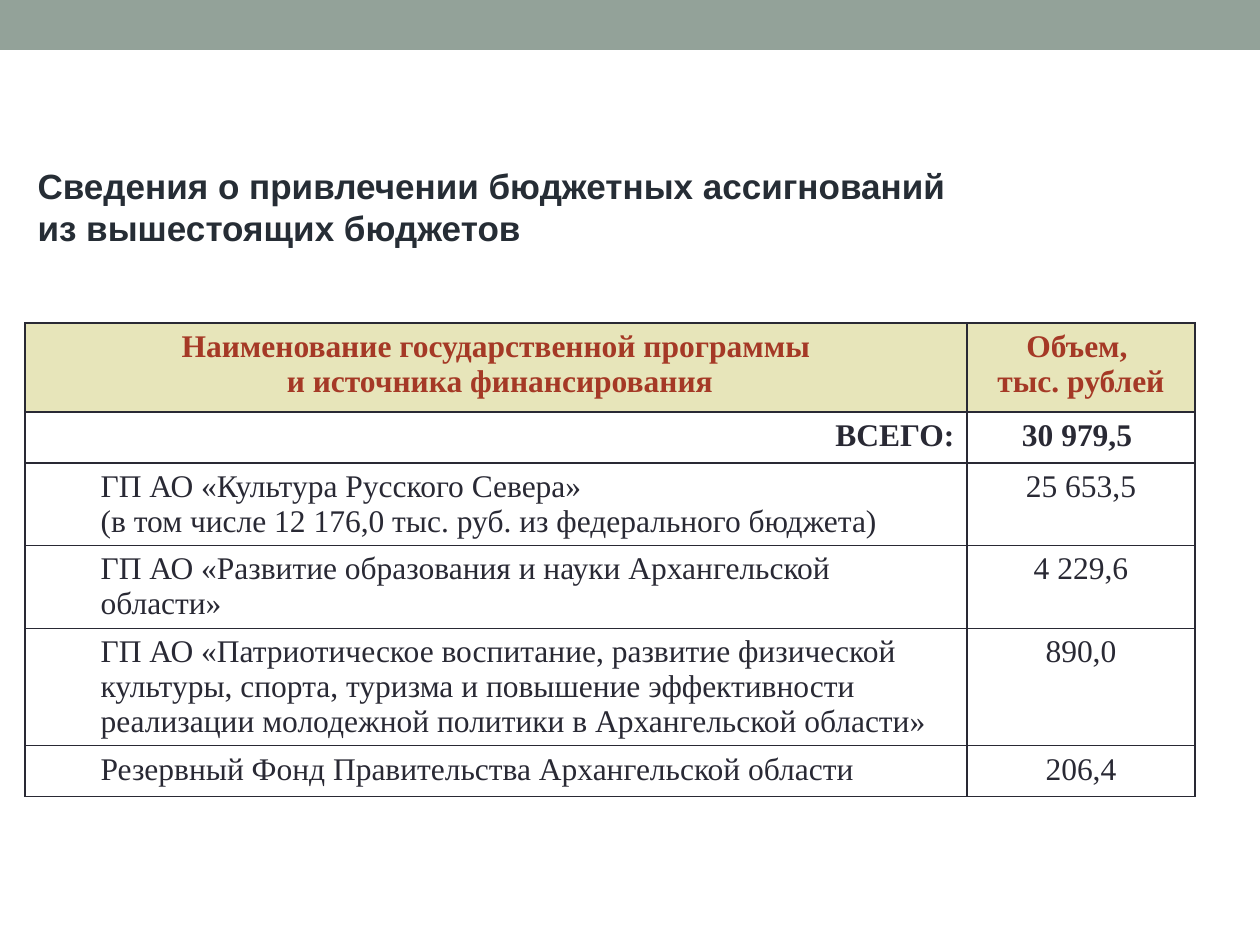
from dataclasses import dataclass

from lxml.etree import SubElement
from pptx import Presentation
from pptx.dml.color import RGBColor as Rgb
from pptx.enum.shapes import MSO_SHAPE as Shape
from pptx.enum.text import MSO_ANCHOR as Anchor, PP_ALIGN as Align
from pptx.oxml.ns import qn
from pptx.util import Emu, Pt

EMU_PER_PX = 914400 / 126
TITLE_ONLY = 5


@dataclass(frozen=True)
class Theme:
    band: str = "93A299"
    title: str = "262D35"
    header_fill: str = "E7E5BA"
    header_text: str = "A53926"
    body: str = "292934"
    title_font: str = "Arial"
    table_font: str = "Times New Roman"
    title_size: int = 20
    table_size: int = 18
    border_width: int = 1


THEME = Theme()

TITLE = "Сведения о привлечении бюджетных ассигнований \vиз вышестоящих бюджетов"
HEADER = ("Наименование государственной программы\n и источника финансирования",
          "Объем, \nтыс. рублей")
TOTAL = ("ВСЕГО:", "30 979,5 ")
PROGRAMS = [
    ("ГП АО «Культура Русского Севера»\n"
     "(в том числе 12 176,0 тыс. руб. из федерального бюджета)", "25 653,5"),
    ("ГП АО «Развитие образования и науки Архангельской области»", "4 229,6"),
    ("ГП АО «Патриотическое воспитание, развитие физической культуры, спорта, "
     "туризма и повышение эффективности реализации молодежной политики "
     "в Архангельской области»", "890,0"),
    ("Резервный Фонд Правительства Архангельской области", "206,4"),
]
COLUMN_WIDTHS = (942, 228)
ROW_HEIGHTS = (89, 51, 82, 83, 117, 51)
INDENT = 63


def px(length):
    return Emu(round(length * EMU_PER_PX))


def format_runs(para, font, size, color, bold):
    for span in para.runs:
        span.font.name = font
        span.font.size = Pt(size)
        span.font.bold = bold
        span.font.color.rgb = Rgb.from_string(color)


def add_band(page):
    band = page.shapes.add_shape(Shape.RECTANGLE, 0, 0, px(1260), px(50))
    band.shadow.inherit = False
    band.fill.solid()
    band.fill.fore_color.rgb = Rgb.from_string(THEME.band)
    band.line.fill.background()


def set_title(page):
    title = page.shapes.title
    title.left, title.top, title.width, title.height = map(px, (25, 155, 1201, 103))
    frame = title.text_frame
    frame.text = TITLE
    frame.vertical_anchor = Anchor.MIDDLE
    para = frame.paragraphs[0]
    para.alignment = Align.LEFT
    format_runs(para, THEME.title_font, THEME.title_size, THEME.title, True)


def set_borders(cell):
    properties = cell._tc.get_or_add_tcPr()
    for side in ("lnL", "lnR", "lnT", "lnB"):
        line = SubElement(properties, qn(f"a:{side}"), w=str(Pt(THEME.border_width)))
        fill = SubElement(line, qn("a:solidFill"))
        SubElement(fill, qn("a:srgbClr"), val=THEME.body)


def fill_cell(cell, text, align, color, bold, indent=0, fill=None):
    set_borders(cell)
    if fill:
        cell.fill.solid()
        cell.fill.fore_color.rgb = Rgb.from_string(fill)
    else:
        cell.fill.background()
    cell.text_frame.text = text
    for para in cell.text_frame.paragraphs:
        para.alignment = align
        if indent:
            para.level = 1
            properties = para._p.get_or_add_pPr()
            properties.set("marL", str(px(indent)))
            properties.set("indent", "0")
        format_runs(para, THEME.table_font, THEME.table_size, color, bold)


def add_budget_table(page):
    rows = [HEADER, TOTAL, *PROGRAMS]
    frame = page.shapes.add_table(len(rows), len(COLUMN_WIDTHS), px(25), px(323),
                                  px(sum(COLUMN_WIDTHS)), px(sum(ROW_HEIGHTS)))
    table = frame.table
    for column, width in zip(table.columns, COLUMN_WIDTHS):
        column.width = px(width)
    for row, height in zip(table.rows, ROW_HEIGHTS):
        row.height = px(height)

    for index, (name, amount) in enumerate(rows):
        name_cell, amount_cell = table.rows[index].cells
        if index == 0:
            for cell, text in ((name_cell, name), (amount_cell, amount)):
                fill_cell(cell, text, Align.CENTER, THEME.header_text, True,
                          fill=THEME.header_fill)
        else:
            is_total = index == 1
            align = Align.RIGHT if is_total else Align.LEFT
            fill_cell(name_cell, name, align, THEME.body, is_total, INDENT)
            fill_cell(amount_cell, amount, Align.CENTER, THEME.body, is_total)


def main():
    deck = Presentation()
    deck.slide_width, deck.slide_height = px(1260), px(945)
    page = deck.slides.add_slide(deck.slide_layouts[TITLE_ONLY])
    add_band(page)
    set_title(page)
    add_budget_table(page)
    deck.save("out.pptx")


if __name__ == "__main__":
    main()
